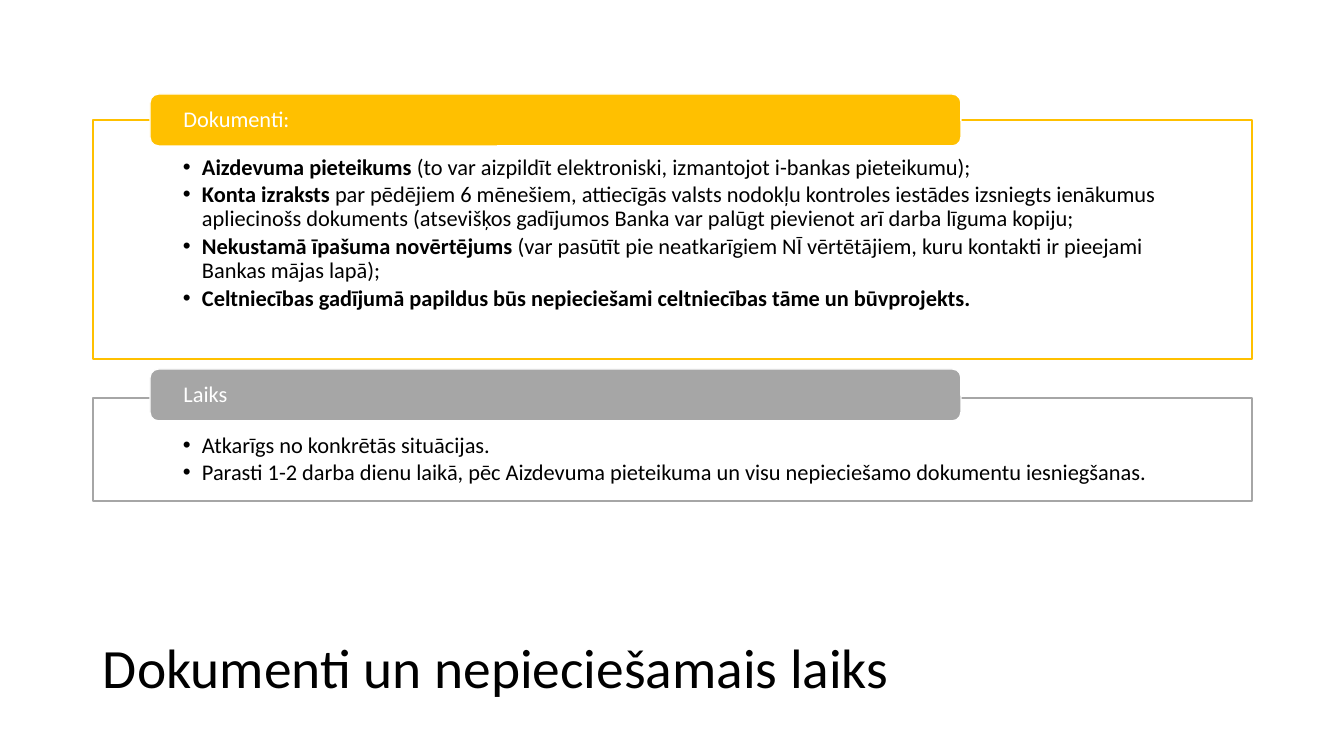
"""Build the slide on loan documents and the time needed."""
from lxml.etree import SubElement
from pptx import Presentation
from pptx.dml.color import RGBColor
from pptx.enum.shapes import MSO_SHAPE as SHAPE
from pptx.enum.text import MSO_ANCHOR as ANCHOR, MSO_AUTO_SIZE as AUTO_SIZE, PP_ALIGN as ALIGN
from pptx.oxml.ns import qn
from pptx.util import Pt

PX = 914400 / 100.8
COLORS = {"text": "000000", "white": "FFFFFF", "documents": "FFC000", "time": "A6A6A6"}
FONT = "Calibri"


def px(*lengths):
    return [round(length * PX) for length in lengths]


def format_text(shape, insets, anchor, size, color, space_after=0):
    frame = shape.text_frame
    frame.word_wrap = True
    frame.auto_size = AUTO_SIZE.NONE
    frame.vertical_anchor = anchor
    frame.margin_left, frame.margin_top, frame.margin_right, frame.margin_bottom = px(*insets)
    for paragraph in frame.paragraphs:
        paragraph.alignment = ALIGN.LEFT
        paragraph.line_spacing = 0.9
        paragraph.space_before = Pt(0)
        paragraph.space_after = Pt(space_after)
        for run in paragraph.runs:
            run.font.name = FONT
            run.font.size = Pt(size)
            run.font.color.rgb = RGBColor.from_string(COLORS[color])


sections = [
    ("documents", "Dokumenti:", (120, 239), 94, [
        ("Aizdevuma pieteikums ",
         "(to var aizpildīt elektroniski, izmantojot i-bankas pieteikumu);"),
        ("Konta izraksts ",
         "par pēdējiem 6 mēnešiem, attiecīgās valsts nodokļu kontroles iestādes izsniegts "
         "ienākumus apliecinošs dokuments (atsevišķos gadījumos Banka var palūgt pievienot "
         "arī darba līguma kopiju;"),
        ("Nekustamā īpašuma novērtējums ",
         "(var pasūtīt pie neatkarīgiem NĪ vērtētājiem, kuru kontakti ir pieejami "
         "Bankas mājas lapā);"),
        ("Celtniecības gadījumā papildus būs nepieciešami celtniecības tāme un būvprojekts.", ""),
    ]),
    ("time", "Laiks", (398, 103), 369, [
        ("", "Atkarīgs no konkrētās situācijas."),
        ("", "Parasti 1-2 darba dienu laikā, pēc Aizdevuma pieteikuma un visu "
             "nepieciešamo dokumentu iesniegšanas."),
    ]),
]

presentation = Presentation()
presentation.slide_width, presentation.slide_height = px(1344, 756)
slide = presentation.slides.add_slide(presentation.slide_layouts[5])

title = slide.shapes.title
title.left, title.top, title.width, title.height = px(93, 610, 851, 121)
title.text_frame.text = "Dokumenti un nepieciešamais laiks"
format_text(title, (10, 5, 10, 5), ANCHOR.MIDDLE, 39.6, "text")

for accent, heading, (body_top, body_height), heading_top, items in sections:
    accent_color = RGBColor.from_string(COLORS[accent])

    body = slide.shapes.add_shape(SHAPE.RECTANGLE, *px(93, body_top, 1159, body_height))
    body.shadow.inherit = False
    body.fill.solid()
    body.fill.fore_color.rgb = RGBColor.from_string(COLORS["white"])
    white = body.fill._xPr.find(qn("a:solidFill"))[0]
    SubElement(white, qn("a:alpha"), val="90000")
    body.line.color.rgb = accent_color
    body.line.width = Pt(1)
    for index, (lead, detail) in enumerate(items):
        frame = body.text_frame
        paragraph = frame.add_paragraph() if index else frame.paragraphs[0]
        for wording, bold in ((lead, True), (detail, False)):
            if wording:
                run = paragraph.add_run()
                run.text = wording
                run.font.bold = bold
    format_text(body, (90, 36, 90, 12), ANCHOR.TOP, 16, "text", 2.4)
    indent, = px(19)
    for paragraph in body.text_frame.paragraphs:
        properties = paragraph._p.get_or_add_pPr()
        properties.set("marL", str(indent))
        properties.set("indent", str(-indent))
        SubElement(properties, qn("a:buFont"), typeface="Arial")
        SubElement(properties, qn("a:buChar"), char="•")

    header = slide.shapes.add_shape(SHAPE.ROUNDED_RECTANGLE, *px(150, heading_top, 811, 52))
    header.shadow.inherit = False
    header.fill.solid()
    header.fill.fore_color.rgb = accent_color
    header.line.color.rgb = RGBColor.from_string(COLORS["white"])
    header.line.width = Pt(1)
    header.text_frame.text = heading
    format_text(header, (31, 0, 31, 0), ANCHOR.MIDDLE, 16, "white")

presentation.save("out.pptx")
